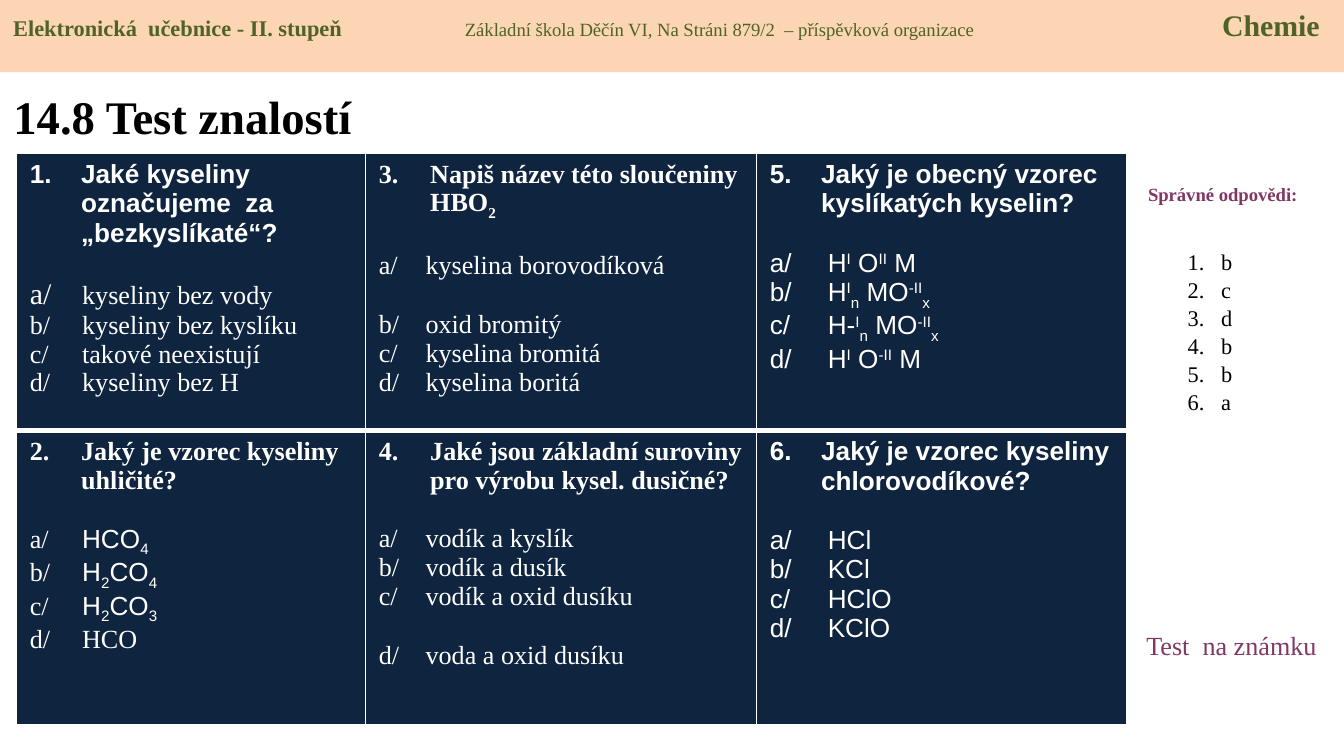
from dataclasses import dataclass

from lxml import etree
from pptx import Presentation
from pptx.dml.color import RGBColor
from pptx.enum.shapes import MSO_SHAPE
from pptx.enum.text import MSO_ANCHOR, MSO_AUTO_SIZE, PP_ALIGN
from pptx.oxml.ns import qn
from pptx.util import Pt

RECTANGLE = MSO_SHAPE.RECTANGLE
TOP, MIDDLE = MSO_ANCHOR.TOP, MSO_ANCHOR.MIDDLE
LEFT, CENTER = PP_ALIGN.LEFT, PP_ALIGN.CENTER
NO_AUTOFIT = MSO_AUTO_SIZE.NONE

SERIF, SANS = "Times New Roman", "Arial"
COLORS = {
    "band": "FCD5B5", "green": "4F6228", "plum": "813763",
    "navy": "0F243E", "white": "FFFFFF", "black": "000000",
}
BASELINES = {"^": "30000", "_": "-25000"}
BLANK_LINE = 16
HANG = 27.5


@dataclass
class Answer:
    text: str
    font: str = SERIF
    label_font: str = SERIF
    label_size: float = 14
    gap: float = 0


@dataclass
class Question:
    heading: str
    font: str
    indent: float
    answers: list[Answer]


def sans_answers(*texts: str) -> list[Answer]:
    return [Answer(text, SANS, SANS) for text in texts]


QUESTIONS = [
    Question("Jaké kyseliny označujeme  za „bezkyslíkaté“?", SANS, 28, [
        Answer("kyseliny bez vody", label_size=16),
        Answer("kyseliny bez kyslíku"),
        Answer("takové neexistují"),
        Answer("kyseliny bez H")]),
    Question("Jaký je vzorec kyseliny uhličité?", SERIF, 28, [
        Answer("HCO|_4", SANS),
        Answer("H|_2|CO|_4", SANS),
        Answer("H|_2|CO|_3", SANS),
        Answer("HCO")]),
    Question("Napiš název této sloučeniny HBO|_2", SERIF, 25, [
        Answer("kyselina borovodíková"),
        Answer("oxid bromitý", gap=BLANK_LINE),
        Answer("kyselina bromitá"),
        Answer("kyselina boritá")]),
    Question("Jaké jsou základní suroviny pro výrobu kysel. dusičné?", SERIF, 25, [
        Answer("vodík a kyslík"),
        Answer("vodík a dusík"),
        Answer("vodík a oxid dusíku"),
        Answer("voda a oxid dusíku", gap=BLANK_LINE)]),
    Question("Jaký je obecný vzorec kyslíkatých kyselin?", SANS, 31, sans_answers(
        "H|^I| O|^II| M", "H|^I|_n| MO|^-II|_x",
        "H-|^I|_n| MO|^-II|_x", "H|^I| O|^-II| M")),
    Question("Jaký je vzorec kyseliny chlorovodíkové?", SANS, 31, sans_answers(
        "HCl", "KCl", "HClO", "KClO")),
]


def set_font(font, name: str, size: float, color: str, bold: bool = False) -> None:
    font.name = name
    font.size = Pt(size)
    font.bold = bold
    font.color.rgb = RGBColor.from_string(COLORS[color])


def hang(para, indent: float) -> None:
    properties = para._p.get_or_add_pPr()
    properties.set("marL", str(Pt(indent)))
    properties.set("indent", str(-Pt(indent)))


def number(para, indent: float, start: int) -> None:
    hang(para, indent)
    etree.SubElement(para._p.get_or_add_pPr(), qn("a:buAutoNum"),
                     type="arabicPeriod", startAt=str(start))


def add_spans(para, text: str, name: str, bold: bool = False) -> None:
    for part in text.split("|"):
        span = para.add_run()
        span.text = part.lstrip("^_")
        set_font(span.font, name, 14, "white", bold)
        if part[0] in BASELINES:
            span.font._element.set("baseline", BASELINES[part[0]])


def add_border(cell, side: str, width: float) -> None:
    line = etree.SubElement(cell._tc.get_or_add_tcPr(), qn(f"a:ln{side}"), w=str(Pt(width)))
    fill = etree.SubElement(line, qn("a:solidFill"))
    etree.SubElement(fill, qn("a:srgbClr"), val=COLORS["white"])


def fill_cell(cell, question: Question, order: int, row: int) -> None:
    widths = {"L": 1, "R": 1, "T": 3 if row else 1, "B": 1 if row else 3}
    for side, width in widths.items():
        add_border(cell, side, width)
    cell.fill.solid()
    cell.fill.fore_color.rgb = RGBColor.from_string(COLORS["navy"])

    heading = cell.text_frame.paragraphs[0]
    number(heading, HANG, order)
    add_spans(heading, question.heading, question.font, bold=True)
    for index, answer in enumerate(question.answers):
        para = cell.text_frame.add_paragraph()
        hang(para, question.indent)
        para.space_before = Pt(answer.gap if index else BLANK_LINE)
        label = para.add_run()
        label.text = "abcd"[index] + "/\t"
        set_font(label.font, answer.label_font, answer.label_size, "white")
        add_spans(para, answer.text, answer.font)


def place(shape, left: float, top: float, width: float, height: float) -> None:
    shape.left, shape.top = Pt(left), Pt(top)
    shape.width, shape.height = Pt(width), Pt(height)


def add_label(page, text: str, frame: tuple, size: float, bold: bool, align) -> None:
    box = page.shapes.add_textbox(*map(Pt, frame))
    box.text_frame.word_wrap = True
    para = box.text_frame.paragraphs[0]
    para.text = text
    para.alignment = align
    set_font(para.font, SERIF, size, "plum", bold)


def add_header(page) -> None:
    band = page.shapes.add_shape(RECTANGLE, 0, 0, Pt(720), Pt(38.7))
    band.shadow.inherit = False
    band.fill.solid()
    band.fill.fore_color.rgb = RGBColor.from_string(COLORS["band"])
    band.line.fill.background()
    band.text_frame.vertical_anchor = TOP
    para = band.text_frame.paragraphs[0]
    para.alignment = LEFT
    tabs = etree.SubElement(para._p.get_or_add_pPr(), qn("a:tabLst"))
    for position, align in ((242, "l"), (700, "r")):
        etree.SubElement(tabs, qn("a:tab"), pos=str(Pt(position)), algn=align)
    for text, size, bold in (
        ("Elektronická  učebnice - II. stupeň\t", 12, True),
        ("Základní škola Děčín VI, Na Stráni 879/2  – příspěvková organizace\t", 10, False),
        ("Chemie", 16, True),
    ):
        span = para.add_run()
        span.text = text
        set_font(span.font, SERIF, size, "green", bold)


def add_title(page) -> None:
    title = page.shapes.title
    place(title, 0, 41, 238, 42.5)
    title.text_frame.auto_size = NO_AUTOFIT
    title.text_frame.vertical_anchor = MIDDLE
    para = title.text_frame.paragraphs[0]
    para.text = "14.8 Test znalostí"
    para.alignment = LEFT
    set_font(para.font, SERIF, 25, "black", True)


def add_key(page) -> None:
    key = page.placeholders[1]
    place(key, 629, 113, 40, 124)
    frame = key.text_frame
    frame.auto_size = NO_AUTOFIT
    frame.margin_top = Pt(20)
    for index, letter in enumerate("bcdbba"):
        para = frame.add_paragraph() if index else frame.paragraphs[0]
        para.text = letter
        number(para, 18, 1)
        para.space_before = Pt(0.6)
        set_font(para.font, SERIF, 12, "black")


def add_test(page) -> None:
    columns, rows = (187, 209.5, 198.5), (148.5, 158)
    table = page.shapes.add_table(len(rows), len(columns), Pt(8.8), Pt(82),
                                  Pt(sum(columns)), Pt(sum(rows))).table
    table.first_row = table.horz_banding = False
    for column, width in zip(table.columns, columns):
        column.width = Pt(width)
    for row, height in zip(table.rows, rows):
        row.height = Pt(height)
    for index, question in enumerate(QUESTIONS):
        column, row = divmod(index, len(rows))
        fill_cell(table.cell(row, column), question, index + 1, row)


def main() -> None:
    deck = Presentation()
    deck.slide_width, deck.slide_height = Pt(720), Pt(405)
    page = deck.slides.add_slide(deck.slide_layouts[1])
    add_title(page)
    add_label(page, "Správné odpovědi:", (604, 94.5, 102, 19.5), 10, True, CENTER)
    add_test(page)
    add_key(page)
    add_label(page, "Test  na známku", (607, 333.5, 113, 24.5), 14, False, LEFT)
    add_header(page)
    deck.save("out.pptx")


if __name__ == "__main__":
    main()
